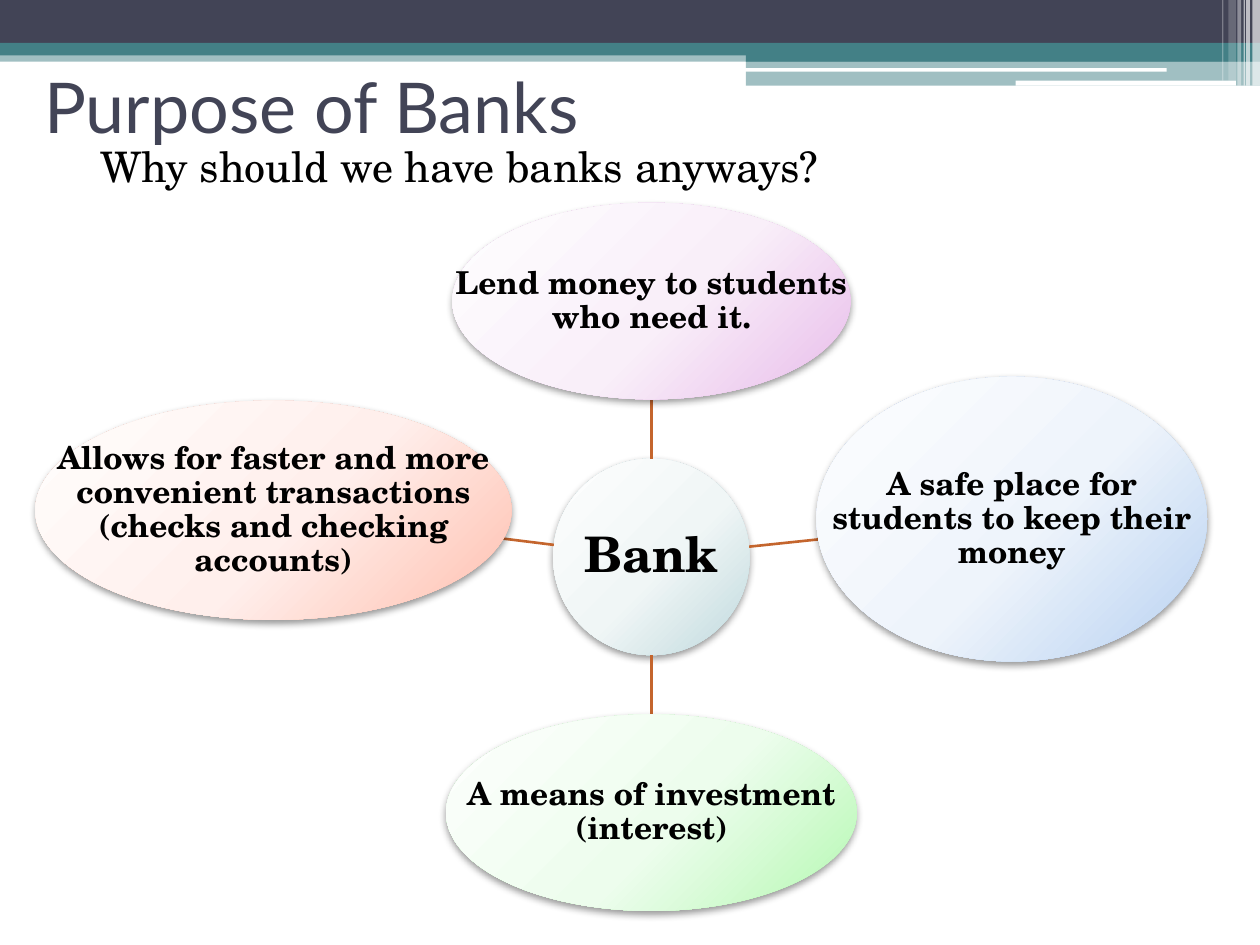
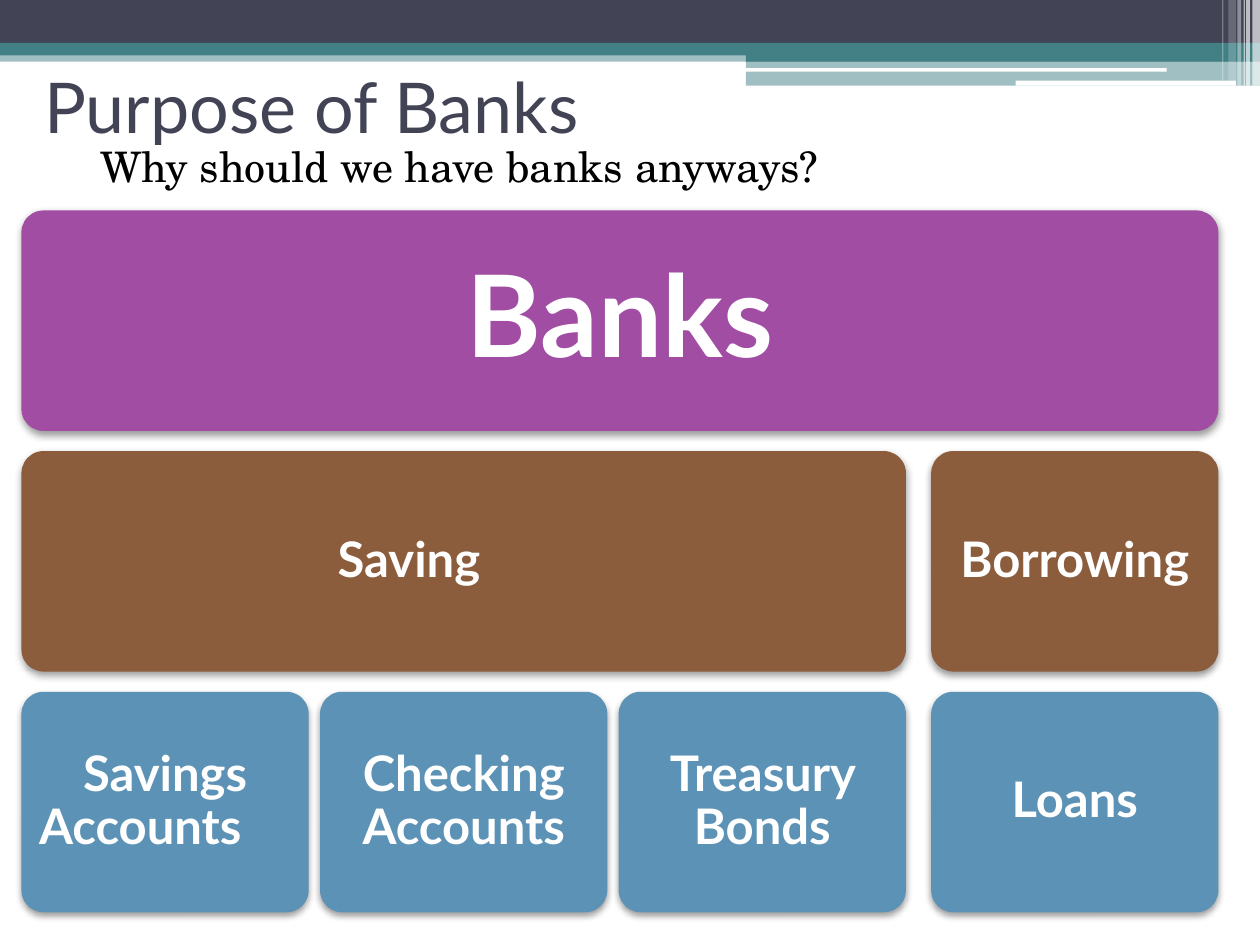
import math

import pptx
import pptx.dml.color
import pptx.enum.shapes
import pptx.enum.text
import pptx.oxml
import pptx.oxml.ns
import pptx.util

Inches = pptx.util.Inches
Pt = pptx.util.Pt
SHAPE = pptx.enum.shapes.MSO_SHAPE
ALIGN = pptx.enum.text.PP_ALIGN
MIDDLE = pptx.enum.text.MSO_ANCHOR.MIDDLE

# Content
TITLE = "Purpose of Banks"
QUESTION = "Why should we have banks anyways?"

# Text, frame (left, top, width, height), gradient stops
HUB = ("Bank", (4.39, 3.64, 1.56, 1.56), ("FEFEFE", "F0F6F6", "BFD9DD"))
SPOKES = [
    ("Lend money to students who need it.",
     (3.59, 1.61, 3.16, 1.56), ("FEFEFF", "F9EFF9", "E8BBEA")),
    ("A safe place for students to keep their money",
     (6.48, 2.99, 3.1, 2.26), ("FEFEFF", "EEF4FB", "B6D0F1")),
    ("A means of investment (interest)",
     (3.54, 5.67, 3.26, 1.56), ("FEFFFE", "EDFDED", "B5F8B2")),
    ("Allows for faster and more convenient transactions "
     "(checks and checking accounts)",
     (0.28, 3.18, 3.78, 1.74), ("FFFEFD", "FFEFEC", "FFBFAE")),
]

ROOT = "Banks"
BRANCHES = [
    ("Saving\t", ["Savings Accounts\t", "Checking Accounts", "Treasury Bonds"]),
    ("Borrowing", ["Loans"]),
]

# Shared look
COLORS = {
    "navy": "424456", "teal": "438086", "white": "FFFFFF", "black": "000000",
    "spoke": "C4652D", "root": "A04DA3", "branch": "8B5D3D", "leaf": "5C92B5",
}
SANS, SERIF = "Lato", "TeX Gyre Schola"

# Left, top, width, height, color, opacity in percent
BANDS = [
    (0, 0.4, 10, 0.09, "teal", 50),
    (0, 0, 10, 0.34, "navy", 100),
    (0, 0.34, 10, 0.1, "teal", 100),
    (5.92, 0.39, 4.08, 0.1, "teal", 100),
    (5.92, 0.48, 4.08, 0.2, "teal", 50),
    (5.91, 0.54, 3.35, 0.03, "white", 100),
    (8.06, 0.64, 1.75, 0.04, "white", 100),
    (9.94, 0, 0.06, 0.68, "white", 65),
    (9.89, 0, 0.03, 0.68, "white", 65),
    (9.87, 0, 0.01, 0.68, "white", 60),
    (9.82, 0, 0.03, 0.68, "white", 40),
    (9.75, 0, 0.06, 0.64, "white", 20),
    (9.7, 0, 0.01, 0.64, "white", 30),
]

# Block grid
GRID_LEFT, GRID_TOP = 0.17, 1.67
BLOCK_WIDTH, BLOCK_HEIGHT = 2.28, 1.75
LEAF_GAP, BRANCH_GAP, ROW_GAP = 0.09, 0.2, 0.16


def rgb(name):
    return pptx.dml.color.RGBColor.from_string(COLORS[name])


def qn(tag):
    return pptx.oxml.ns.qn(tag)


def xml(text):
    """Build an element; the first tag receives the drawing namespace."""
    head, tail = text.split(">", 1)
    return pptx.oxml.parse_xml(f"{head} {pptx.oxml.ns.nsdecls('a')}>{tail}")


def add_shape(page, kind, frame, color, opacity=100):
    shape = page.shapes.add_shape(kind, *map(Inches, frame))
    shape.shadow.inherit = False
    shape.line.fill.background()
    shape.fill.solid()
    shape.fill.fore_color.rgb = rgb(color)
    if opacity < 100:
        tint = shape.fill._xPr.find(".//" + qn("a:srgbClr"))
        tint.append(xml(f'<a:alpha val="{opacity * 1000}"></a:alpha>'))
    return shape


def add_shadow(shape):
    effects = shape._element.spPr.find(qn("a:effectLst"))
    effects.append(xml(
        f'<a:outerShdw blurRad="{Pt(4.1)}" dist="{Pt(2)}" dir="5400000" '
        'algn="ctr" rotWithShape="0"><a:srgbClr val="000000">'
        '<a:alpha val="40000"/></a:srgbClr></a:outerShdw>'))


def set_gradient(shape, stops):
    properties = shape._element.spPr
    marks = "".join(
        f'<a:gs pos="{position}"><a:srgbClr val="{color}"/></a:gs>'
        for position, color in zip((0, 55000, 100000), stops))
    properties.replace(properties.find(qn("a:solidFill")), xml(
        f'<a:gradFill rotWithShape="1"><a:gsLst>{marks}</a:gsLst>'
        '<a:path path="circle"><a:fillToRect l="-40000" t="-90000" '
        'r="140000" b="190000"/></a:path></a:gradFill>'))


def style(para, font, size, color, bold=False):
    para.font.name = font
    para.font.size = Pt(size)
    para.font.color.rgb = rgb(color)
    para.font.bold = bold


def write_centered(shape, text, inset, font, size, color):
    frame = shape.text_frame
    frame.word_wrap = True
    frame.vertical_anchor = MIDDLE
    frame.margin_left = frame.margin_right = Inches(inset)
    frame.margin_top = frame.margin_bottom = Inches(inset)
    para = frame.paragraphs[0]
    para.text = text
    para.alignment = ALIGN.CENTER
    para.line_spacing = 0.9
    style(para, font, size, color, bold=True)
    return para


def add_page(deck):
    """Start a slide with the bands, the question and the title."""
    page = deck.slides.add_slide(deck.slide_layouts[5])
    for *frame, color, opacity in BANDS:
        add_shape(page, SHAPE.RECTANGLE, frame, color, opacity)

    box = page.shapes.add_textbox(*map(Inches, (0.58, 1.07, 9.02, 0.5)))
    box.text_frame.word_wrap = True
    para = box.text_frame.paragraphs[0]
    para.text = QUESTION
    para.space_before = Pt(3)
    indents = para._p.get_or_add_pPr()
    indents.set("marL", str(Inches(0.4)))
    indents.set("indent", str(Inches(-0.28)))
    style(para, SERIF, 24, "black")

    title = page.shapes.title
    title.left, title.top, title.width, title.height = map(
        Inches, (0.25, 0.25, 9, 1.17))
    title.text_frame.text = TITLE
    title.text_frame.vertical_anchor = MIDDLE
    title.text_frame.auto_size = pptx.enum.text.MSO_AUTO_SIZE.NONE
    para = title.text_frame.paragraphs[0]
    para.alignment = ALIGN.LEFT
    style(para, SANS, 40, "navy")
    # Bring the title in front of the bands
    page.shapes._spTree.append(title._element)
    return page


def center(frame):
    left, top, width, height = frame
    return left + width / 2, top + height / 2


def edge_point(frame, target):
    """Point where an ellipse meets the line from its centre to target."""
    x, y = center(frame)
    dx, dy = target[0] - x, target[1] - y
    reach = 1 / math.hypot(dx / (frame[2] / 2), dy / (frame[3] / 2))
    return x + dx * reach, y + dy * reach


def add_spoke_line(page, hub, spoke):
    start = edge_point(hub, center(spoke))
    end = edge_point(spoke, center(hub))
    line = page.shapes.add_connector(
        pptx.enum.shapes.MSO_CONNECTOR.STRAIGHT, *map(Inches, start + end))
    line.line.color.rgb = rgb("spoke")
    line.line.width = Pt(1.5)
    line._element.spPr.append(xml("<a:effectLst></a:effectLst>"))


def add_bubble(page, text, frame, stops, size, inset):
    bubble = add_shape(page, SHAPE.OVAL, frame, "white")
    set_gradient(bubble, stops)
    add_shadow(bubble)
    # The label spans the full frame, wider than the oval's own text area
    label = page.shapes.add_textbox(*map(Inches, frame))
    return write_centered(label, text, inset, SERIF, size, "black")


def add_block(page, text, frame, color, size=28, inset=0.07):
    block = add_shape(page, SHAPE.ROUNDED_RECTANGLE, frame, color)
    block.adjustments[0] = 0.1
    add_shadow(block)
    para = write_centered(block, text, inset, SANS, size, "white")
    para._p.get_or_add_pPr().set("defTabSz", str(Inches(1)))


def build_hub_slide(deck):
    page = add_page(deck)
    add_bubble(page, *HUB, size=28, inset=0.02)
    for text, frame, stops in SPOKES:
        add_spoke_line(page, HUB[1], frame)
        add_bubble(page, text, frame, stops, size=18, inset=0.01)


def build_block_slide(deck):
    page = add_page(deck)
    root_top, branch_top, leaf_top = (
        GRID_TOP + row * (BLOCK_HEIGHT + ROW_GAP) for row in range(3))
    left = GRID_LEFT
    for branch, leaves in BRANCHES:
        width = len(leaves) * (BLOCK_WIDTH + LEAF_GAP) - LEAF_GAP
        add_block(page, branch, (left, branch_top, width, BLOCK_HEIGHT), "branch")
        for column, leaf in enumerate(leaves):
            leaf_left = left + column * (BLOCK_WIDTH + LEAF_GAP)
            add_block(page, leaf,
                      (leaf_left, leaf_top, BLOCK_WIDTH, BLOCK_HEIGHT), "leaf")
        left += width + BRANCH_GAP
    total_width = left - BRANCH_GAP - GRID_LEFT
    add_block(page, ROOT, (GRID_LEFT, root_top, total_width, BLOCK_HEIGHT),
              "root", size=65, inset=0.22)


def main():
    deck = pptx.Presentation()
    deck.slide_width, deck.slide_height = Inches(10), Inches(7.5)
    build_hub_slide(deck)
    build_block_slide(deck)
    deck.save("out.pptx")


if __name__ == "__main__":
    main()
